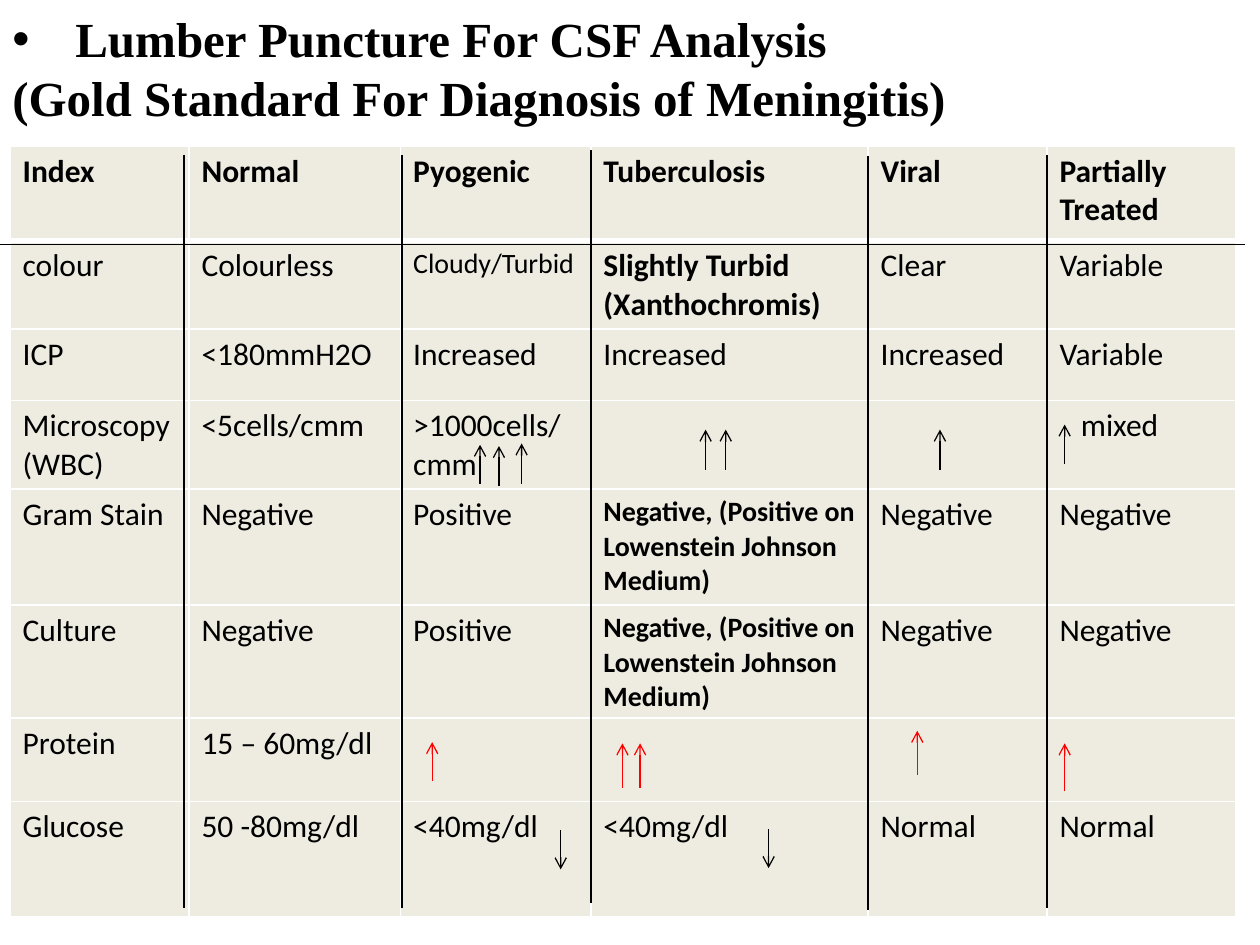
from lxml import etree
from pptx import Presentation
from pptx.dml.color import RGBColor
from pptx.enum import shapes, text
from pptx.oxml.ns import qn
from pptx.util import Inches, Pt

# Content
COLORS = {"black": "000000", "red": "FF0000", "white": "FFFFFF", "cell": "EEECE1"}
TITLE = ["Lumber Puncture For CSF Analysis", "(Gold Standard For Diagnosis of Meningitis)"]
STAIN = "Negative, (Positive on Lowenstein Johnson Medium)"
ROWS = [
    ["Index", "Normal", "Pyogenic", "Tuberculosis", "Viral", "Partially Treated"],
    ["colour", "Colourless", "Cloudy/Turbid", "Slightly Turbid\n(Xanthochromis)", "Clear", "Variable"],
    ["ICP", "<180mmH2O", "Increased", "Increased", "Increased", "Variable"],
    ["Microscopy\n(WBC)", "<5cells/cmm", ">1000cells/cmm", "", "", "mixed"],
    ["Gram Stain", "Negative", "Positive", STAIN, "Negative", "Negative"],
    ["Culture", "Negative", "Positive", STAIN, "Negative", "Negative"],
    ["Protein", "15 – 60mg/dl", "", "", "", ""],
    ["Glucose", "50 -80mg/dl", "<40mg/dl", "<40mg/dl", "Normal", "Normal"],
]
COLUMN_WIDTHS = [1.42, 1.68, 1.51, 2.2, 1.42, 1.5]
ROW_HEIGHTS = [0.75, 0.66, 0.57, 0.66, 0.92, 0.85, 0.66, 0.92]
SMALL_CELLS = {(1, 2), (4, 3), (5, 3)}
BOLD_CELLS = {(1, 3), (4, 3), (5, 3)}
INDENTED_CELLS = {(3, 5)}  # leaves room for the arrow before the word

# Arrows: x, tail y, head y
PROTEIN_ARROWS = [(3.43, 6.2, 5.89), (4.94, 6.25, 5.9), (5.08, 6.25, 5.9),
                  (7.28, 6.15, 5.8), (8.45, 6.28, 5.9)]
GLUCOSE_ARROWS = [(6.1, 6.58, 6.89), (4.45, 6.59, 6.9)]
CELL_COUNT_ARROWS = [(5.6, 3.73, 3.41), (5.76, 3.73, 3.41), (3.81, 3.84, 3.53),
                     (3.96, 3.86, 3.54), (4.14, 3.84, 3.52), (7.46, 3.73, 3.41),
                     (8.45, 3.68, 3.37)]

# Rules between columns: x, top
COLUMN_RULES = [(1.46, 1.23), (3.19, 1.23), (4.69, 1.19), (6.89, 1.24), (8.31, 1.23)]
RULE_LENGTH = 5.98


def color(name):
    return RGBColor.from_string(COLORS[name])


def add_run(paragraph, words, font, size, bold):
    run = paragraph.add_run()
    run.text = words
    run.font.name = font
    run.font.size = Pt(size)
    run.font.bold = bold
    run.font.color.rgb = color("black")


def add_bullet(paragraph, indent):
    properties = paragraph._p.get_or_add_pPr()
    properties.set("marL", str(Inches(indent)))
    properties.set("indent", str(-Inches(indent)))
    etree.SubElement(properties, qn("a:buFont"), typeface="Arial")
    etree.SubElement(properties, qn("a:buChar"), char="•")


def add_border(cell, side, width):
    line = etree.SubElement(cell._tc.get_or_add_tcPr(), qn("a:" + side), w=str(Pt(width)))
    fill = etree.SubElement(line, qn("a:solidFill"))
    etree.SubElement(fill, qn("a:srgbClr"), val=COLORS["white"])


def add_line(slide, start, end, name, arrow=False):
    ends = [Inches(value) for value in (*start, *end)]
    connector = slide.shapes.add_connector(shapes.MSO_CONNECTOR.STRAIGHT, *ends)
    connector.line.color.rgb = color(name)
    connector.line.width = Pt(0.75)
    if arrow:
        etree.SubElement(connector.line._get_or_add_ln(), qn("a:tailEnd"), type="arrow")
    etree.SubElement(connector._element.spPr, qn("a:effectLst"))


def add_title(slide):
    box = slide.shapes.add_textbox(Inches(0), Inches(0.02), Inches(9.88), Inches(1.04))
    frame = box.text_frame
    frame.word_wrap = True
    frame.auto_size = text.MSO_AUTO_SIZE.SHAPE_TO_FIT_TEXT
    for index, words in enumerate(TITLE):
        paragraph = frame.add_paragraph() if index else frame.paragraphs[0]
        add_run(paragraph, words, "Times New Roman", 28, True)
    add_bullet(frame.paragraphs[0], 0.5)


def fill_cell(cell, words, row, column):
    header = row == 0
    size = 16 if (row, column) in SMALL_CELLS else 18
    bold = header or (row, column) in BOLD_CELLS
    for index, line in enumerate(words.split("\n")):
        frame = cell.text_frame
        paragraph = frame.add_paragraph() if index else frame.paragraphs[0]
        if line:
            add_run(paragraph, line, "Calibri", size, bold)
        else:
            paragraph.font.size = Pt(size)
    if (row, column) in INDENTED_CELLS:
        cell.margin_left = Inches(0.27)
    widths = {"lnL": 1, "lnR": 1, "lnT": 3 if row == 1 else 1, "lnB": 3 if header else 1}
    for side, width in widths.items():
        add_border(cell, side, width)
    cell.fill.solid()
    cell.fill.fore_color.rgb = color("cell")


def add_results_table(slide):
    frame = slide.shapes.add_table(len(ROWS), len(COLUMN_WIDTHS), Inches(0.08), Inches(1.16),
                                   Inches(sum(COLUMN_WIDTHS)), Inches(sum(ROW_HEIGHTS)))
    table = frame.table
    table.first_row = table.horz_banding = False
    for column, width in zip(table.columns, COLUMN_WIDTHS):
        column.width = Inches(width)
    for row, height in zip(table.rows, ROW_HEIGHTS):
        row.height = Inches(height)
    for row, entries in enumerate(ROWS):
        for column, words in enumerate(entries):
            fill_cell(table.cell(row, column), words, row, column)


def main():
    presentation = Presentation()
    presentation.slide_width, presentation.slide_height = Inches(10), Inches(7.5)
    slide = presentation.slides.add_slide(presentation.slide_layouts[6])
    add_title(slide)
    add_results_table(slide)

    # Arrows for raised and lowered values
    for name, arrows in (("red", PROTEIN_ARROWS), ("black", GLUCOSE_ARROWS + CELL_COUNT_ARROWS)):
        for x, tail, head in arrows:
            add_line(slide, (x, tail), (x, head), name, arrow=True)

    # Rules under the header and between columns
    add_line(slide, (9.88, 1.94), (0, 1.94), "black")
    for x, top in COLUMN_RULES:
        add_line(slide, (x, top), (x, top + RULE_LENGTH), "black")

    presentation.save("out.pptx")


if __name__ == "__main__":
    main()
